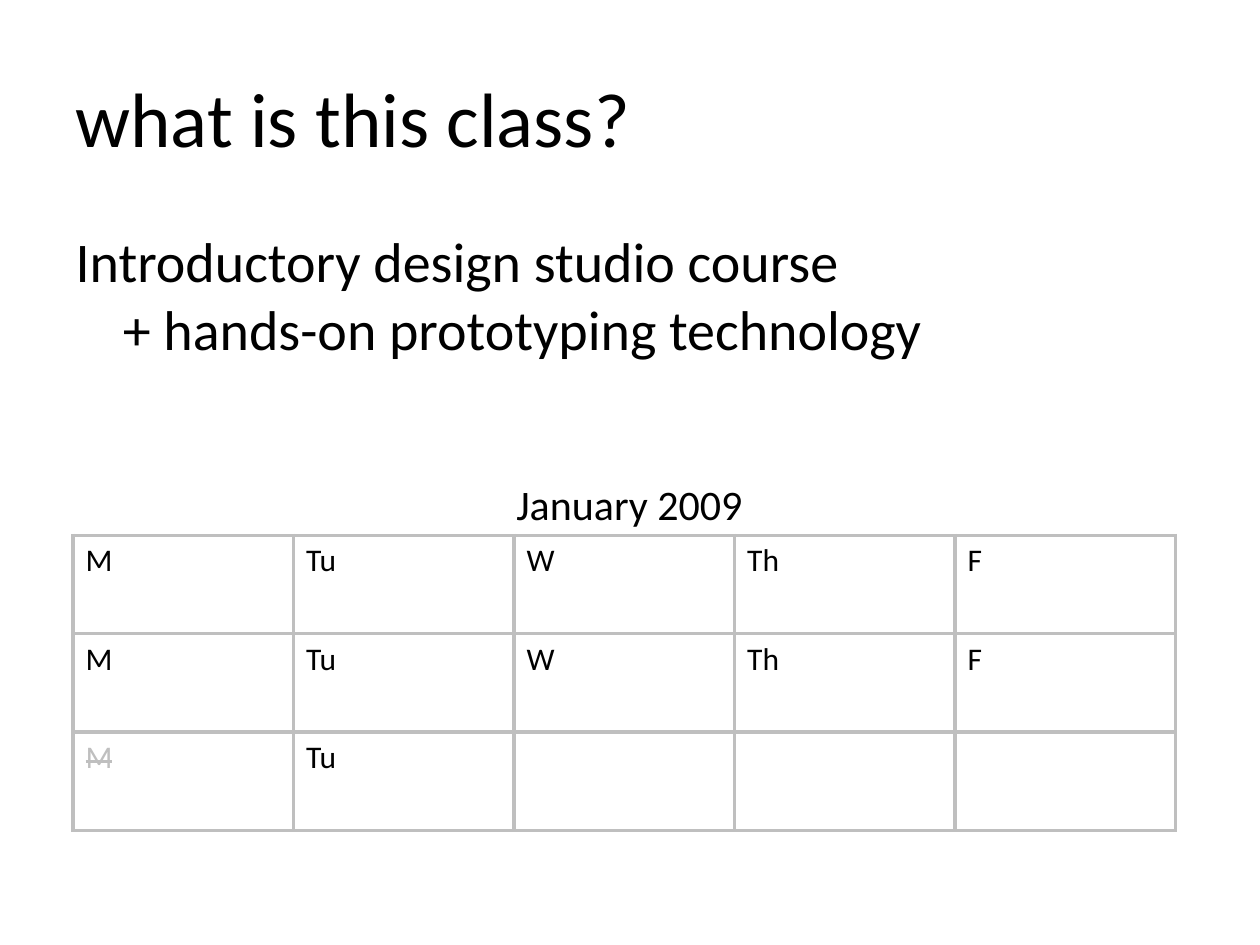
from dataclasses import dataclass

from lxml import etree
from pptx import Presentation
from pptx import util as u
from pptx.dml.color import RGBColor
from pptx.enum import text as t
from pptx.oxml.ns import qn

WIDE, HIGH = u.Inches(10), u.Inches(7.5)
HUES = {"ink": "000000", "grey": "BFBFBF"}
FACE = "Calibri"
COL, ROW = u.Inches(1.75), u.Inches(0.78)
EDGE = u.Pt(2.25)


@dataclass
class Box:
    left: float
    top: float
    width: float
    height: float

    def spans(self) -> tuple[int, int, int, int]:
        return (int(self.left * WIDE), int(self.top * HIGH),
                int(self.width * WIDE), int(self.height * HIGH))


@dataclass
class Day:
    name: str
    hue: str = "ink"
    struck: bool = False


WEEK = [Day(name) for name in ("M", "Tu", "W", "Th", "F")]
DAYS = [WEEK, WEEK, [Day("M", "grey", True), Day("Tu")]]


def style(frame, size: float, hue: str = "ink", struck: bool = False) -> None:
    for para in frame.paragraphs:
        for run in para.runs:
            run.font.name = FACE
            run.font.size = u.Pt(size)
            run.font.color.rgb = RGBColor.from_string(HUES[hue])
            if struck:
                run.font._element.set("strike", "sngStrike")


def place(shape, box: Box) -> None:
    shape.left, shape.top, shape.width, shape.height = box.spans()


def write(shape, box: Box, words: str, size: float, anchor) -> None:
    place(shape, box)
    frame = shape.text_frame
    frame.text = words
    frame.auto_size = t.MSO_AUTO_SIZE.NONE
    frame.vertical_anchor = anchor
    frame.paragraphs[0].alignment = t.PP_ALIGN.LEFT
    style(frame, size)


def border(cell) -> None:
    props = cell._tc.get_or_add_tcPr()
    for side in ("lnL", "lnR", "lnT", "lnB"):
        line = etree.SubElement(props, qn(f"a:{side}"), w=str(EDGE))
        fill = etree.SubElement(line, qn("a:solidFill"))
        etree.SubElement(fill, qn("a:srgbClr"), val=HUES["grey"])
    cell.fill.background()


def draw_days(slide, left: int, top: int, weeks: list[list[Day]]) -> None:
    rows, cols = len(weeks), len(WEEK)
    grid = slide.shapes.add_table(
        rows, cols, left, top, cols * COL, rows * ROW).table
    grid.first_row = grid.horz_banding = False
    for row in grid.rows:
        row.height = ROW
    for cell in grid.iter_cells():
        border(cell)
    for r, week in enumerate(weeks):
        for c, day in enumerate(week):
            frame = grid.cell(r, c).text_frame
            frame.text = day.name
            style(frame, 18, day.hue, day.struck)


def draw_month(slide, box: Box, words: str) -> None:
    frame = slide.shapes.add_textbox(*box.spans()).text_frame
    frame.text = words
    frame.word_wrap = False
    frame.auto_size = t.MSO_AUTO_SIZE.SHAPE_TO_FIT_TEXT
    style(frame, 24)


def main() -> None:
    deck = Presentation()
    deck.slide_width, deck.slide_height = WIDE, HIGH
    slide = deck.slides.add_slide(deck.slide_layouts[1])
    title, body = slide.placeholders
    write(title, Box(0.05, 0.04, 0.9, 1 / 6), "what is this class?",
          44, t.MSO_ANCHOR.MIDDLE)
    write(body, Box(0.05, 1.75 / 7.5, 0.9, 1 / 6),
          "Introductory design studio course \v"
          "+ hands-on prototyping technology", 32, t.MSO_ANCHOR.TOP)
    props = body.text_frame.paragraphs[0]._p.get_or_add_pPr()
    etree.SubElement(props, qn("a:buNone"))
    draw_days(slide, u.Inches(0.58), u.Inches(4.25), DAYS)
    draw_month(slide, Box(0.4, 0.5, 0.2, 1 / 15), "January 2009")
    deck.save("out.pptx")


if __name__ == "__main__":
    main()
